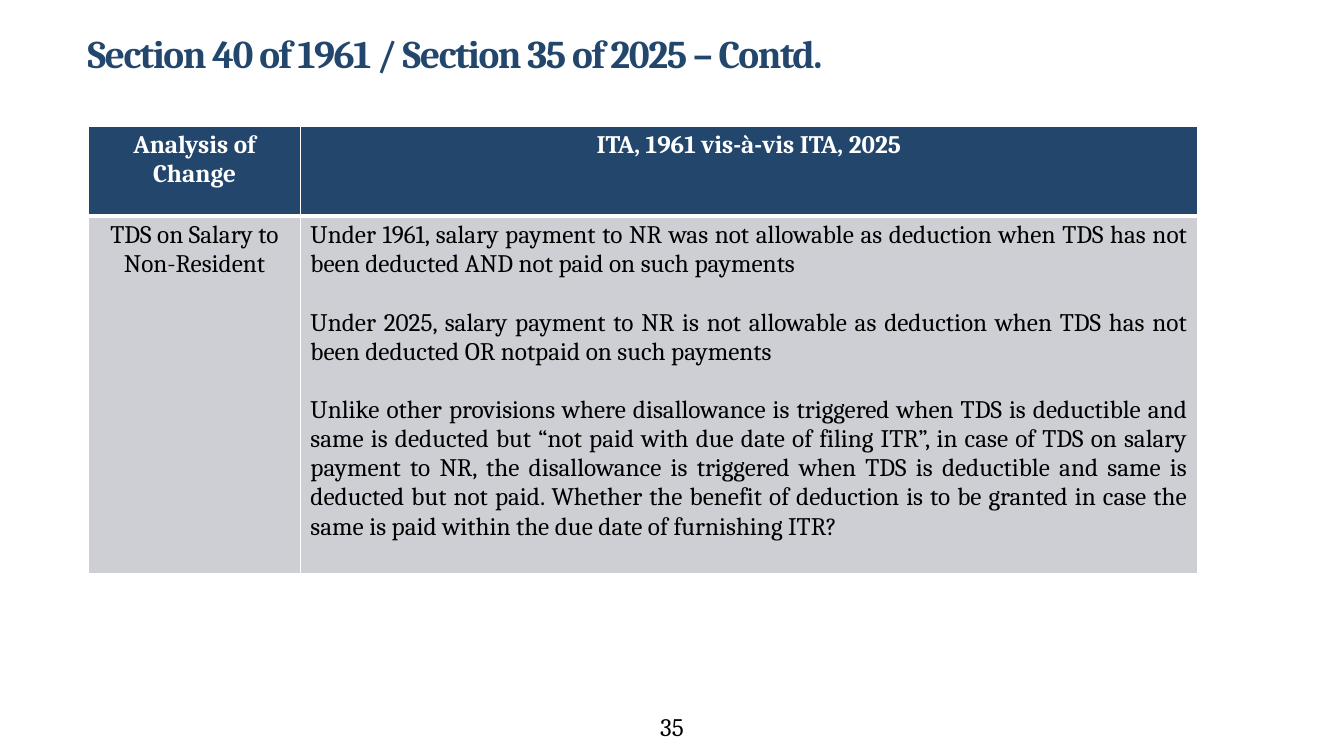
from lxml import etree
from pptx import Presentation
from pptx import util as u
from pptx.dml import color
from pptx.enum import text
from pptx.oxml import ns

deck = Presentation()
deck.slide_width, deck.slide_height = u.Inches(13.33), u.Inches(7.5)
col, row = deck.slide_width / 100, deck.slide_height / 100
slide = deck.slides.add_slide(deck.slide_layouts[6])
NAVY, GREY, WHITE, BLACK = "23466D", "CDCFD4", "FFFFFF", "000000"
MID, FULL = text.PP_ALIGN.CENTER, text.PP_ALIGN.JUSTIFY


def style(par, size, hue, bold, align):
    par.alignment = align
    font = par.font
    font.name, font.size, font.bold = "Cambria", u.Pt(size), bold
    font.color.rgb = color.RGBColor.from_string(hue)


def label(words, x, y, w, h):
    box = slide.shapes.add_textbox(int(x * col), int(y * row), int(w * col), int(h * row))
    frame = box.text_frame
    frame.word_wrap = True
    frame.text = words
    return frame


rows = [
    (11.87, NAVY, WHITE, True, (1, 3), [
        (MID, ["Analysis of Change"]),
        (MID, ["ITA, 1961 vis-à-vis ITA, 2025"]),
    ]),
    (47.33, GREY, BLACK, False, (3, 1), [
        (MID, ["TDS on Salary to Non-Resident"]),
        (FULL, [
            "Under 1961, salary payment to NR was not allowable as deduction when TDS has not been deducted AND not paid on such payments",
            "Under 2025, salary payment to NR is not allowable as deduction when TDS has not been deducted OR notpaid on such payments",
            "Unlike other provisions where disallowance is triggered when TDS is deductible and same is deducted but “not paid with due date of filing ITR”, in case of TDS on salary payment to NR, the disallowance is triggered when TDS is deductible and same is deducted but not paid. Whether the benefit of deduction is to be granted in case the same is paid within the due date of furnishing ITR?",
        ]),
    ]),
]
wide = [15.75, 66.75]
table = slide.shapes.add_table(
    len(rows), len(wide), int(6.6 * col), int(16.67 * row),
    int(sum(wide) * col), int(sum(r[0] for r in rows) * row)).table
for i, w in enumerate(wide):
    table.columns[i].width = int(w * col)

for i, (high, fill, ink, bold, (top, base), cells) in enumerate(rows):
    table.rows[i].height = int(high * row)
    for j, (align, lines) in enumerate(cells):
        cell = table.cell(i, j)
        cell.fill.solid()
        cell.fill.fore_color.rgb = color.RGBColor.from_string(fill)
        cell.text_frame.text = "\n".join(lines)
        pars = cell.text_frame.paragraphs
        for par in pars:
            style(par, 18, ink, bold, align)
        for par in pars[:-1]:
            par.space_after = u.Pt(21)
        props = cell._tc.get_or_add_tcPr()
        for k, (side, thick) in enumerate(zip("LRTB", (1, 1, top, base))):
            edge = etree.Element(ns.qn("a:ln" + side), w=str(u.Pt(thick)))
            paint = etree.SubElement(edge, ns.qn("a:solidFill"))
            etree.SubElement(paint, ns.qn("a:srgbClr"), val=WHITE)
            props.insert(k, edge)

title = label("Section 40 of 1961 / Section 35 of 2025 – Contd.", 5.78, 1.73, 86.25, 11.33)
title.vertical_anchor = text.MSO_ANCHOR.MIDDLE
head = title.paragraphs[0]
head.line_spacing = 0.9
style(head, 28, NAVY, True, text.PP_ALIGN.LEFT)
head.runs[0].font._element.set("spc", "-100")

page = label("35", 38.75, 93.47, 22.5, 5.33)
style(page.paragraphs[0], 18, BLACK, False, MID)

deck.save("out.pptx")
